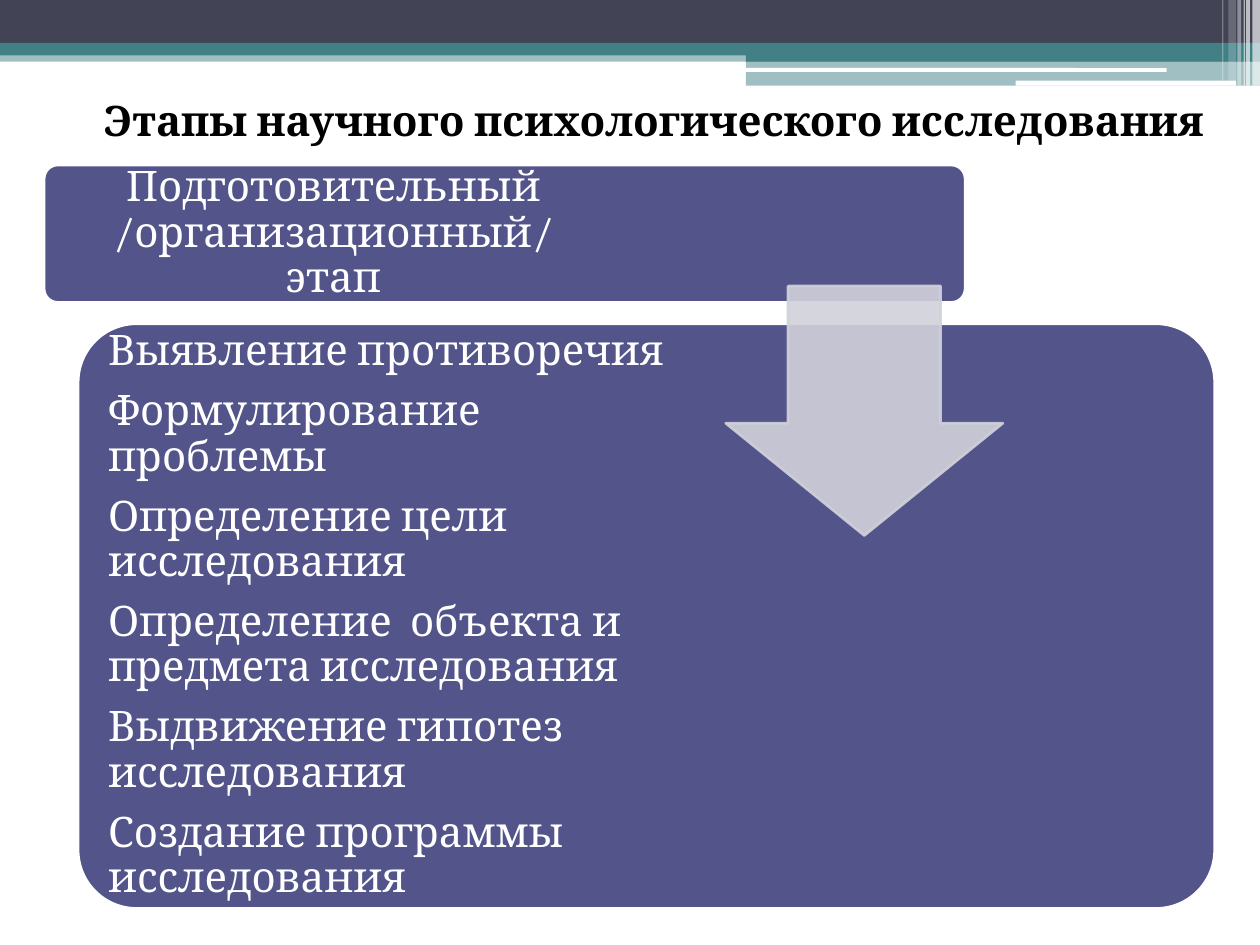
from lxml import etree
from pptx import Presentation
from pptx.dml.color import RGBColor
from pptx.enum.shapes import MSO_SHAPE
from pptx.enum.text import MSO_ANCHOR, PP_ALIGN
from pptx.oxml.ns import qn
from pptx.util import Inches, Pt

RECT = MSO_SHAPE.RECTANGLE
ROUNDED = MSO_SHAPE.ROUNDED_RECTANGLE
DOWN_ARROW = MSO_SHAPE.DOWN_ARROW
TOP, MIDDLE = MSO_ANCHOR.TOP, MSO_ANCHOR.MIDDLE
LEFT, CENTER = PP_ALIGN.LEFT, PP_ALIGN.CENTER

COLORS = {
    "dark": "424456",
    "teal": "438086",
    "violet": "53548A",
    "arrow": "D1D1DA",
    "white": "FFFFFF",
    "black": "000000",
}
FONT = {"name": "Cambria", "size": Pt(24)}
STAGE_TEXT = {"line_spacing": 0.9, "space_after": Pt(8.4)}

TITLE = "Этапы научного психологического исследования"
STAGE = "Подготовительный /организационный/ этап"
STEPS = [
    "Выявление противоречия",
    "Формулирование проблемы",
    "Определение цели исследования",
    "Определение  объекта и предмета исследования",
    "Выдвижение гипотез исследования",
    "Создание программы исследования",
]


def set_color(paint, color, opacity):
    """Make a fill solid, with opacity in percent."""
    paint.solid()
    paint.fore_color.rgb = RGBColor.from_string(COLORS[color])
    if opacity < 100:
        tint = paint._xPr.find(qn("a:solidFill"))[0]
        etree.SubElement(tint, qn("a:alpha"), val=str(opacity * 1000))


def add_block(slide, kind, box, color, opacity=100, adjust=(), line=None):
    block = slide.shapes.add_shape(kind, *map(Inches, box))
    block.shadow.inherit = False
    for index, value in enumerate(adjust):
        block.adjustments[index] = value
    set_color(block.fill, color, opacity)
    if line:
        block.line.width = Pt(1.5)
        set_color(block.line.fill, line, opacity)
    else:
        block.line.fill.background()


def add_text(slide, box, lines, color, align=LEFT, anchor=MIDDLE,
             inset=0.1, bold=False, spacing=None):
    frame = slide.shapes.add_textbox(*map(Inches, box)).text_frame
    layout = {"word_wrap": True, "vertical_anchor": anchor,
              "margin_left": Inches(inset), "margin_right": Inches(inset)}
    for name, value in layout.items():
        setattr(frame, name, value)
    for index, line in enumerate(lines):
        para = frame.add_paragraph() if index else frame.paragraphs[0]
        for name, value in {"alignment": align, **(spacing or {})}.items():
            setattr(para, name, value)
        span = para.add_run()
        span.text = line
        for name, value in {**FONT, "bold": bold}.items():
            setattr(span.font, name, value)
        span.font.color.rgb = RGBColor.from_string(COLORS[color])


def add_header_band(slide, left, top, width):
    right = left + width
    add_block(slide, RECT, (left, top + 0.4, width, 0.09), "teal", 50)
    add_block(slide, RECT, (left, top, width, 0.34), "dark")
    add_block(slide, RECT, (left, top + 0.34, width, 0.1), "teal")

    tab_width = 4.08
    tab_left = right - tab_width
    add_block(slide, RECT, (tab_left, top + 0.39, tab_width, 0.1), "teal")
    add_block(slide, RECT, (tab_left, top + 0.48, tab_width, 0.2), "teal", 50)
    for x, y, length, height in [(5.91, 0.54, 3.35, 0.03),
                                 (8.06, 0.64, 1.75, 0.04)]:
        add_block(slide, ROUNDED, (left + x, top + y, length, height), "white",
                  adjust=[0.17])

    # Stripes: distance from the right edge, width, height, opacity
    for offset, stripe, height, opacity in [
        (0.06, 0.06, 0.68, 65), (0.11, 0.03, 0.68, 65), (0.13, 0.01, 0.68, 60),
        (0.18, 0.03, 0.68, 40), (0.25, 0.06, 0.64, 20), (0.3, 0.01, 0.64, 30),
    ]:
        add_block(slide, RECT, (right - offset, top, stripe, height), "white",
                  opacity)


def add_stage_diagram(slide, left, top, width, height):
    """Stage bar above the panel of its steps, joined by an arrow."""
    bar = (left, top, 7.31, 1.09)
    panel_left, panel_top = left + 0.27, top + 1.26
    panel = (panel_left, panel_top, width - 0.27, height - 1.26)
    for box in (bar, panel):
        add_block(slide, ROUNDED, box, "violet", adjust=[0.1], line="white")
    add_text(slide, (left + 0.04, top + 0.03, 4.51, 1.03), [STAGE], "white",
             align=CENTER, inset=0.15, spacing=STAGE_TEXT)
    add_text(slide, (panel_left + 0.14, panel_top + 0.13, 4.91, 4.37), STEPS,
             "white", spacing=STAGE_TEXT)
    add_block(slide, DOWN_ARROW, (left + 5.41, top + 0.96, 2.2, 1.98), "arrow",
              90, adjust=[0.55, 0.45], line="arrow")


def main():
    deck = Presentation()
    deck.slide_width, deck.slide_height = Inches(10), Inches(7.5)
    page = deck.slides.add_slide(deck.slide_layouts[6])
    add_header_band(page, 0, 0, 10)
    add_stage_diagram(page, 0.35, 1.31, 9.29, 5.9)
    add_text(page, (0.62, 0.7, 9.14, 0.5), [TITLE], "black", align=CENTER,
             anchor=TOP, bold=True)
    deck.save("out.pptx")


if __name__ == "__main__":
    main()
